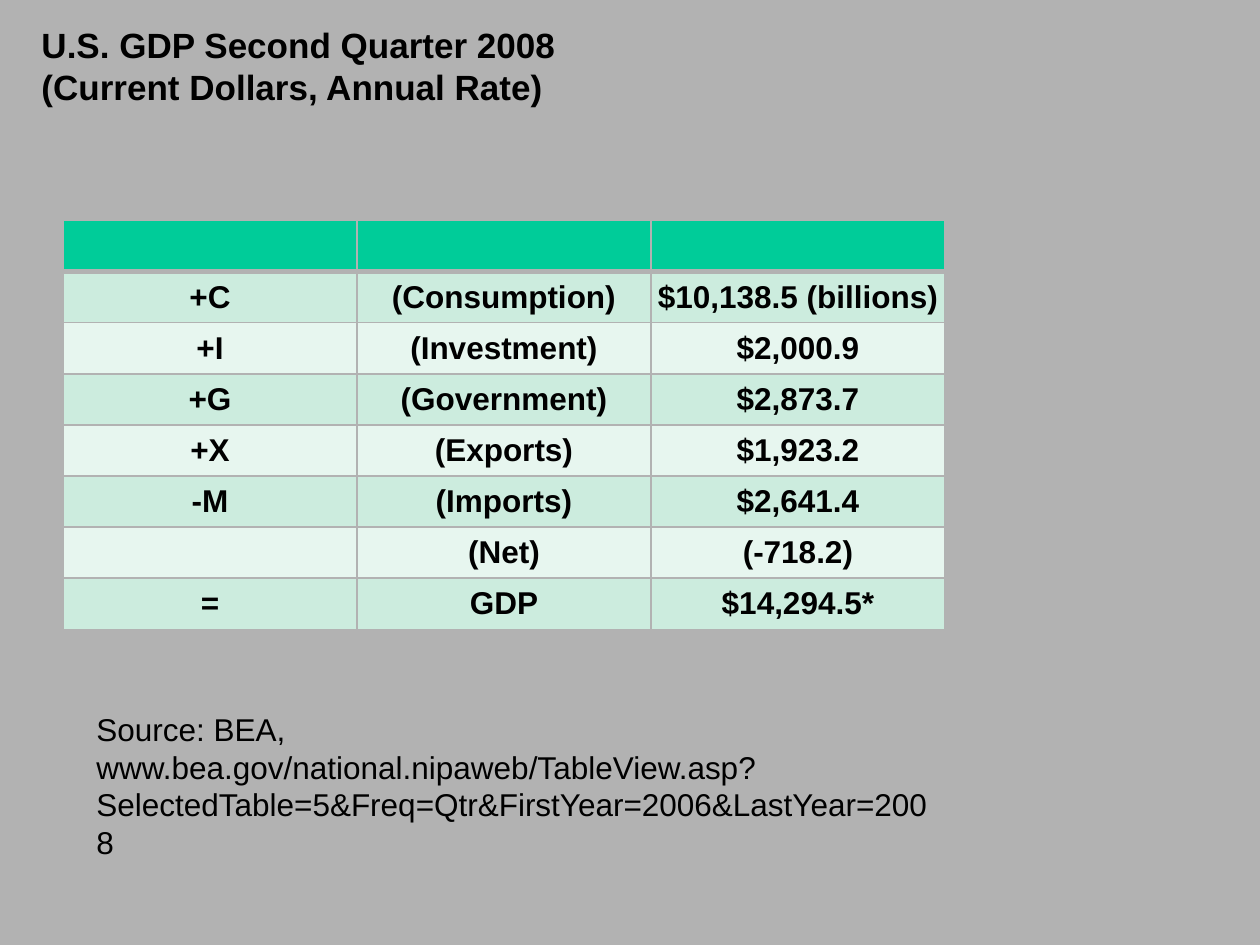
from lxml import etree
from pptx import Presentation
from pptx.dml.color import RGBColor
from pptx.enum.text import MSO_ANCHOR, MSO_AUTO_SIZE, PP_ALIGN
from pptx.oxml.ns import qn
from pptx.util import Pt

LEFT, CENTER = PP_ALIGN.LEFT, PP_ALIGN.CENTER
MIDDLE = MSO_ANCHOR.MIDDLE
NO_FIT = MSO_AUTO_SIZE.NONE

GREY = RGBColor(0xB2, 0xB2, 0xB2)
BLACK = RGBColor(0x00, 0x00, 0x00)
GREEN = RGBColor(0x00, 0xCC, 0x99)
MINT = RGBColor(0xCC, 0xEC, 0xDE)
PALE_MINT = RGBColor(0xE7, 0xF6, 0xEF)

FONT = "Arial"
TITLE_LINES = ["U.S. GDP Second Quarter 2008", "(Current Dollars, Annual Rate)"]
GDP_ROWS = [
    ("", "", ""),
    ("+C", "(Consumption)", "$10,138.5 (billions)"),
    ("+I", "(Investment)", "$2,000.9"),
    ("+G", "(Government)", "$2,873.7"),
    ("+X", "(Exports)", "$1,923.2"),
    ("-M", "(Imports)", "$2,641.4"),
    ("", "(Net)", "(-718.2)"),
    ("=", "GDP", "$14,294.5*"),
]
SOURCE = ("Source: BEA, www.bea.gov/national.nipaweb/TableView.asp?"
          "SelectedTable=5&Freq=Qtr&FirstYear=2006&LastYear=2008")


def add_span(para, text, size, bold=False):
    span = para.add_run()
    span.text = text
    span.font.name = FONT
    span.font.size = Pt(size)
    span.font.bold = bold
    span.font.color.rgb = BLACK


def set_border(cell, side, width):
    """Draw one side of a cell: lnL, lnR, lnT or lnB."""
    properties = cell._tc.get_or_add_tcPr()
    line = etree.SubElement(properties, qn("a:" + side), w=str(Pt(width)))
    fill = etree.SubElement(line, qn("a:solidFill"))
    etree.SubElement(fill, qn("a:srgbClr"), val=str(GREY))


def fill_title(title):
    title.left, title.top = Pt(16.5), Pt(5)
    title.width, title.height = Pt(584), Pt(65)
    frame = title.text_frame
    frame.word_wrap = True
    frame.auto_size = NO_FIT
    frame.vertical_anchor = MIDDLE
    para = frame.paragraphs[0]
    para.alignment = LEFT
    for index, line in enumerate(TITLE_LINES):
        if index:
            para.add_line_break()
        add_span(para, line, 20, bold=True)


def format_cell(cell, text, row):
    # Borders come before the fill in the cell properties
    for side in ("lnL", "lnR", "lnT", "lnB"):
        heavy = (row, side) in ((0, "lnB"), (1, "lnT"))
        set_border(cell, side, 3 if heavy else 1)
    cell.fill.solid()
    cell.fill.fore_color.rgb = GREEN if row == 0 else (PALE_MINT, MINT)[row % 2]
    cell.vertical_anchor = MIDDLE
    cell.margin_left = cell.margin_right = Pt(0.75)
    cell.margin_top = cell.margin_bottom = Pt(0.75)
    para = cell.text_frame.paragraphs[0]
    para.alignment = CENTER
    if text:
        add_span(para, text, 18, bold=True)


def add_gdp_table(page):
    rows, columns = len(GDP_ROWS), len(GDP_ROWS[0])
    frame = page.shapes.add_table(
        rows, columns, Pt(36), Pt(126), Pt(504), Pt(233.6))
    for row, texts in enumerate(GDP_ROWS):
        for column, text in enumerate(texts):
            format_cell(frame.table.cell(row, column), text, row)


def add_source(page):
    box = page.shapes.add_textbox(Pt(48), Pt(402), Pt(492), Pt(72.7))
    box.text_frame.word_wrap = True
    add_span(box.text_frame.paragraphs[0], SOURCE, 18)


def main():
    deck = Presentation()
    deck.slide_width, deck.slide_height = Pt(720), Pt(540)
    page = deck.slides.add_slide(deck.slide_layouts[5])
    page.background.fill.solid()
    page.background.fill.fore_color.rgb = GREY

    fill_title(page.shapes.title)
    add_gdp_table(page)
    add_source(page)
    deck.save("out.pptx")


if __name__ == "__main__":
    main()
